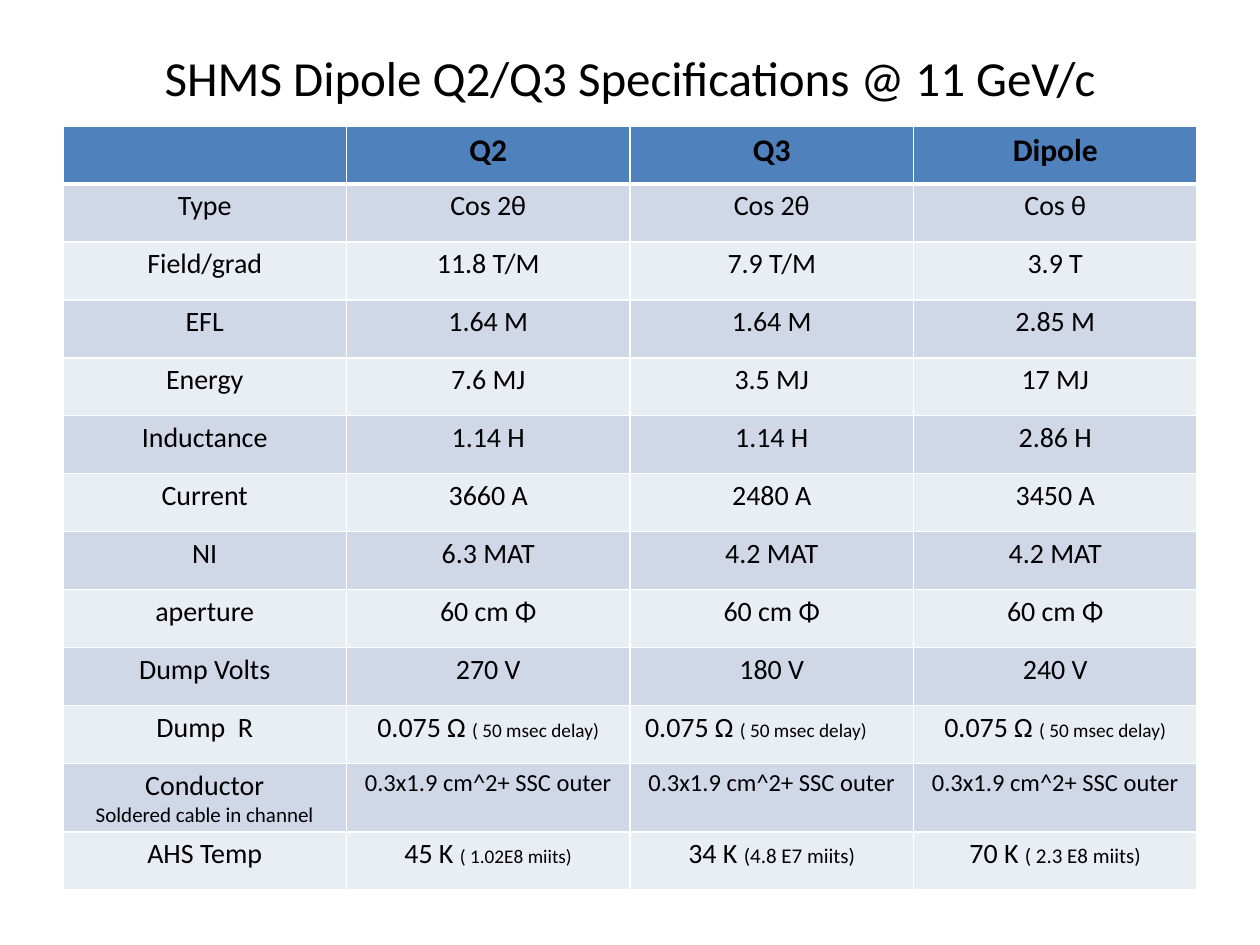
import dataclasses

import pptx
import pptx.dml.color
import pptx.enum.text
import pptx.oxml.ns
import pptx.util
from lxml import etree

Inches = pptx.util.Inches
ALIGN = pptx.enum.text.PP_ALIGN


@dataclasses.dataclass(frozen=True)
class Theme:
    font: str = "Calibri"
    text: str = "000000"
    header: str = "4F81BD"
    bands: tuple = ("D0D8E8", "E9EDF4")
    border: str = "FFFFFF"
    title_size: int = 28
    header_size: int = 18
    body_size: int = 16
    conductor_size: int = 14
    note_size: int = 12
    small_size: int = 11
    border_width: int = 1
    header_rule: int = 3


THEME = Theme()


def noted(value, note, size=THEME.small_size):
    return [[(value, THEME.body_size), (note, size)]]


DELAY = noted("0.075 Ω ", "( 50 msec delay)")
CABLE = [[("0.3x1.9 cm^2+ SSC outer", THEME.conductor_size)]]
CONDUCTOR = [
    [("Conductor", THEME.body_size)],
    [("Soldered cable in channel", THEME.note_size)],
]
JUSTIFIED_CELL = (10, 2)

ROWS = [
    ["", "Q2", "Q3", "Dipole"],
    ["Type", "Cos 2θ", "Cos 2θ", "Cos θ"],
    ["Field/grad", "11.8 T/M", "7.9 T/M", "3.9 T"],
    ["EFL", "1.64 M", "1.64 M", "2.85 M"],
    ["Energy", "7.6 MJ", "3.5 MJ", "17 MJ"],
    ["Inductance", "1.14 H", "1.14 H", "2.86 H"],
    ["Current", "3660 A", "2480 A", "3450 A"],
    ["NI", "6.3 MAT", "4.2 MAT", "4.2 MAT"],
    ["aperture", "60 cm Φ", "60 cm Φ", "60 cm Φ"],
    ["Dump Volts", "270 V", "180 V", "240 V"],
    ["Dump  R", DELAY, DELAY, DELAY],
    [CONDUCTOR, CABLE, CABLE, CABLE],
    [
        "AHS Temp",
        noted("45 K ", "( 1.02E8 miits)"),
        noted("34 K ", "(4.8 E7 miits)", THEME.note_size),
        noted("70 K ", "( 2.3 E8 miits)", THEME.note_size),
    ],
]


def rgb(color):
    return pptx.dml.color.RGBColor.from_string(color)


def add_run(p, text, size, bold=False):
    r = p.add_run()
    r.text = text
    r.font.name = THEME.font
    r.font.size = pptx.util.Pt(size)
    r.font.bold = bold
    r.font.color.rgb = rgb(THEME.text)


def fill_text(tf, paragraphs, align, bold=False):
    for i, runs in enumerate(paragraphs):
        p = tf.add_paragraph() if i else tf.paragraphs[0]
        p.alignment = align
        for text, size in runs:
            add_run(p, text, size, bold)


def set_borders(cell, top, bottom):
    qn = pptx.oxml.ns.qn
    tc_pr = cell._tc.get_or_add_tcPr()
    side = THEME.border_width
    widths = {"lnL": side, "lnR": side, "lnT": top, "lnB": bottom}
    for i, (tag, width) in enumerate(widths.items()):
        ln = etree.Element(qn("a:" + tag), w=str(pptx.util.Pt(width)))
        fill = etree.SubElement(ln, qn("a:solidFill"))
        etree.SubElement(fill, qn("a:srgbClr"), val=THEME.border)
        tc_pr.insert(i, ln)


def add_title(slide, left, top, width, height):
    sp = slide.shapes.add_textbox(left, top, width, height)
    tf = sp.text_frame
    tf.word_wrap = True
    tf.vertical_anchor = pptx.enum.text.MSO_ANCHOR.MIDDLE
    title = "SHMS Dipole Q2/Q3 Specifications @ 11 GeV/c"
    fill_text(tf, [[(title, THEME.title_size)]], ALIGN.CENTER)


def style_cell(cell, content, row, col):
    header = row == 0
    cell.fill.solid()
    cell.fill.fore_color.rgb = rgb(
        THEME.header if header else THEME.bands[(row - 1) % 2])
    cell.margin_left = cell.margin_right = Inches(0.12)
    cell.margin_top = cell.margin_bottom = Inches(0.04)
    set_borders(
        cell,
        top=THEME.header_rule if row == 1 else THEME.border_width,
        bottom=THEME.header_rule if header else THEME.border_width,
    )
    if isinstance(content, str):
        size = THEME.header_size if header else THEME.body_size
        content = [[(content, size)]] if content else []
    justified = (row, col) == JUSTIFIED_CELL
    align = ALIGN.JUSTIFY if justified else ALIGN.CENTER
    fill_text(cell.text_frame, content, align, header)


def add_specifications(slide, left, top, width, row_height):
    n_rows, n_cols = len(ROWS), len(ROWS[0])
    frame = slide.shapes.add_table(
        n_rows, n_cols, left, top, width, row_height * n_rows)
    table = frame.table
    for row, contents in enumerate(ROWS):
        table.rows[row].height = row_height
        for col, content in enumerate(contents):
            style_cell(table.cell(row, col), content, row, col)


def main():
    prs = pptx.Presentation()
    prs.slide_width, prs.slide_height = Inches(10), Inches(7.5)
    slide = prs.slides.add_slide(prs.slide_layouts[6])
    left, width = Inches(0.5), Inches(9)
    add_title(slide, left, Inches(0.3), width, Inches(0.62))
    add_specifications(slide, left, Inches(1), width, Inches(0.46))
    prs.save("out.pptx")


if __name__ == "__main__":
    main()
